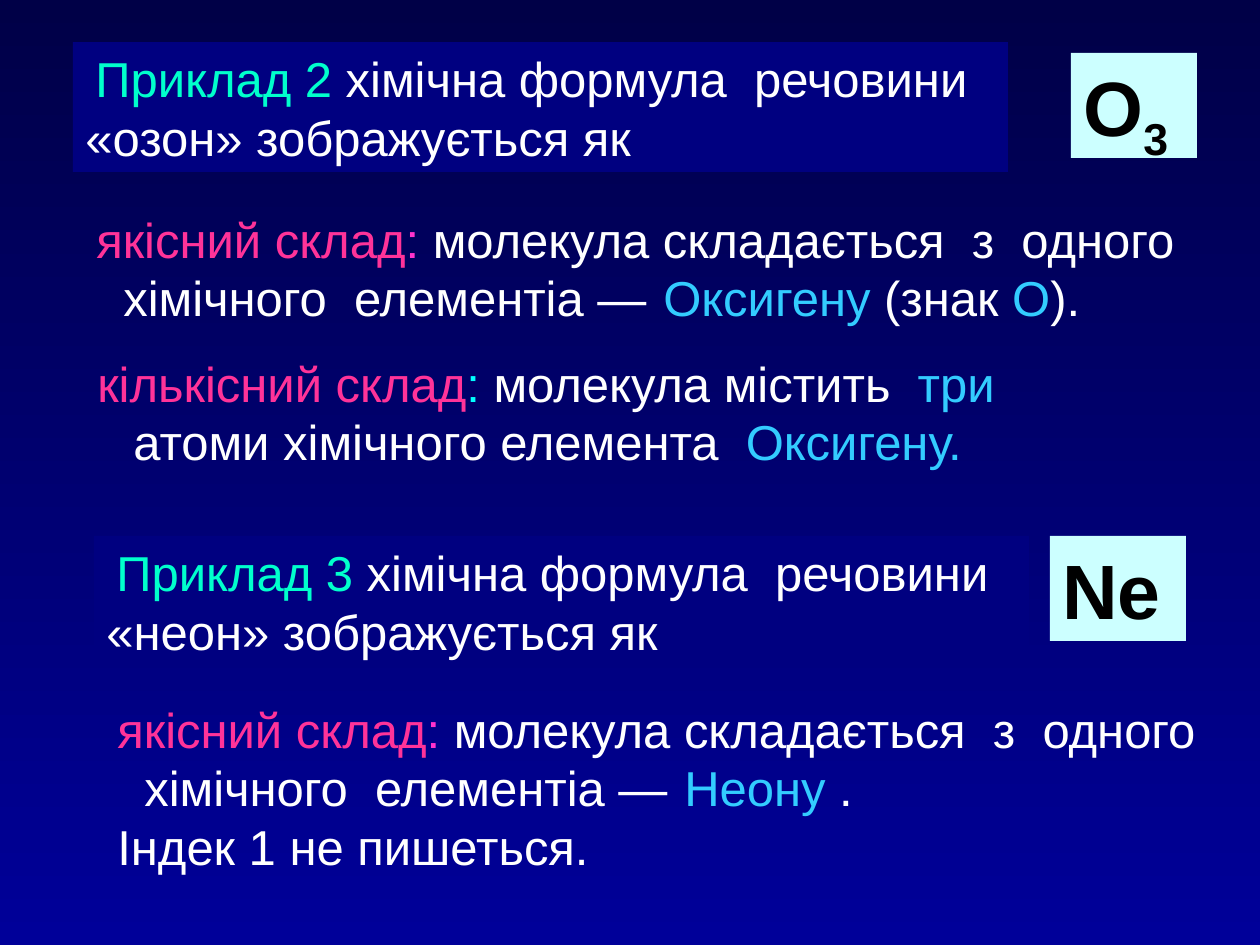
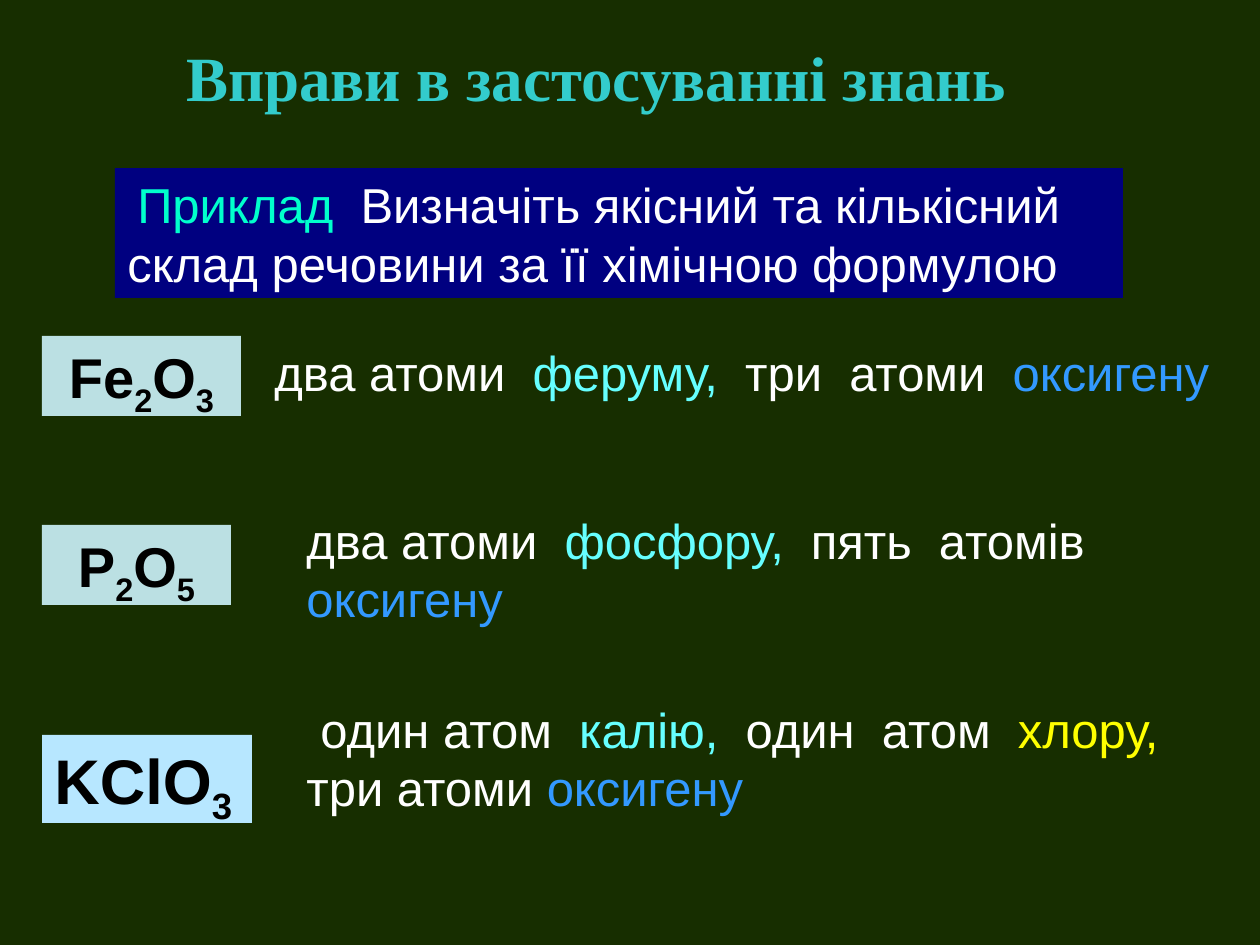
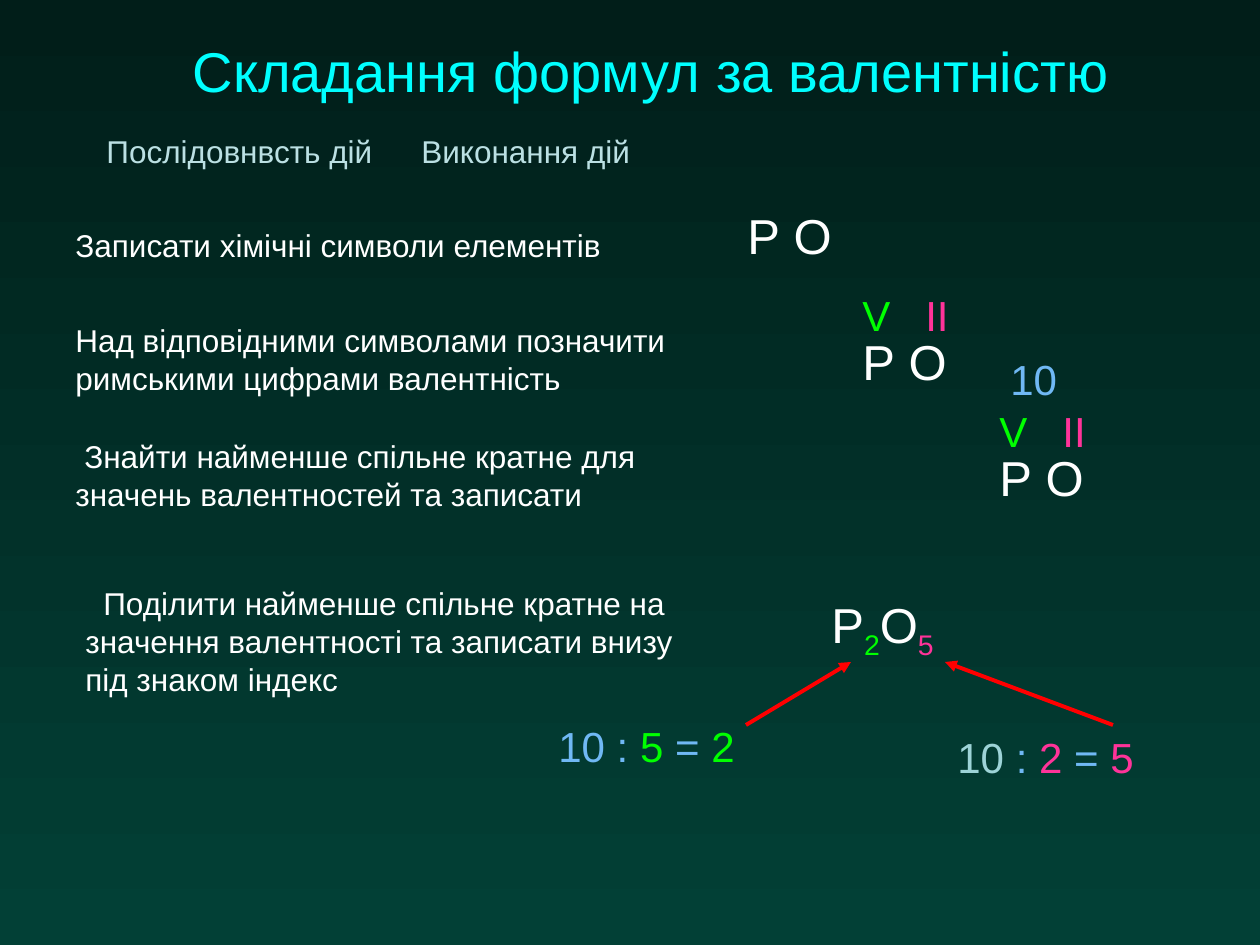
"""Build three chemistry slides on reading and composing formulas."""
import itertools

import pptx
import pptx.dml.color
import pptx.enum.shapes
import pptx.enum.text
import pptx.oxml.ns
import pptx.util
from lxml import etree

RGBColor = pptx.dml.color.RGBColor
ALIGN = pptx.enum.text.PP_ALIGN
ANCHOR = pptx.enum.text.MSO_ANCHOR

EMU_PER_PX = 914400 / 126
TITLE_ONLY, BLANK = 5, 6

WHITE = RGBColor(0xFF, 0xFF, 0xFF)
BLACK = RGBColor(0x00, 0x00, 0x00)
NAVY = RGBColor(0x00, 0x00, 0x80)
NIGHT_TOP, NIGHT_BOTTOM = RGBColor(0x00, 0x00, 0x47), RGBColor(0x00, 0x00, 0x99)
TEAL_TOP, TEAL_BOTTOM = RGBColor(0x01, 0x1E, 0x19), RGBColor(0x02, 0x40, 0x36)
FOREST = RGBColor(0x17, 0x2E, 0x00)
MINT = RGBColor(0x00, 0xFF, 0xCC)
PINK = RGBColor(0xFF, 0x33, 0x99)
MAGENTA = RGBColor(0xFF, 0x33, 0xCC)
CYAN = RGBColor(0x00, 0xFF, 0xFF)
TURQUOISE = RGBColor(0x33, 0xCC, 0xCC)
SKY = RGBColor(0x33, 0xCC, 0xFF)
AQUA = RGBColor(0x66, 0xFF, 0xFF)
BLUE = RGBColor(0x33, 0x99, 0xFF)
YELLOW = RGBColor(0xFF, 0xFF, 0x00)
GREEN = RGBColor(0x00, 0xFF, 0x00)
RED = RGBColor(0xFF, 0x00, 0x00)
SOFT_BLUE = RGBColor(0x70, 0xB8, 0xF4)
SOFT_TEAL = RGBColor(0x9D, 0xD3, 0xD7)
PALE_TEAL = RGBColor(0xBB, 0xE0, 0xE3)
PALE_CYAN = RGBColor(0xCC, 0xFF, 0xFF)
PALE_BLUE = RGBColor(0xB7, 0xE7, 0xFF)


def px(length):
    """Turn pixels into EMU."""
    return pptx.util.Emu(round(length * EMU_PER_PX))


def add_run(paragraph, text, color=WHITE, size=28, bold=False, font="Arial", subscript=False):
    """Append one formatted run to a paragraph."""
    run = paragraph.add_run()
    run.text = text
    run.font.name = font
    run.font.size = pptx.util.Pt(size)
    run.font.bold = bold
    run.font.color.rgb = color
    if subscript:
        run.font._element.set("baseline", "-25000")


def format_paragraph(paragraph, align=ALIGN.LEFT, first=0, margin=0, tab=None):
    """Set alignment, indents and an optional tab stop."""
    paragraph.alignment = align
    properties = paragraph._p.get_or_add_pPr()
    properties.set("marL", str(px(margin)))
    properties.set("indent", str(px(first - margin)))
    if tab:
        tabs = etree.SubElement(properties, pptx.oxml.ns.qn("a:tabLst"))
        etree.SubElement(tabs, pptx.oxml.ns.qn("a:tab"), pos=str(px(tab)), algn="l")


def add_box(slide, left, top, width, height, *lines, fill=None, subscript_digits=False,
            size=28, bold=False, **layout):
    """Add a text box, or a filled rectangle, with one paragraph per line of (text, color) runs."""
    place = [px(length) for length in (left, top, width, height)]
    if fill is None:
        shape = slide.shapes.add_textbox(*place)
    else:
        shape = slide.shapes.add_shape(pptx.enum.shapes.MSO_SHAPE.RECTANGLE, *place)
        shape.shadow.inherit = False
        shape.fill.solid()
        shape.fill.fore_color.rgb = fill
        shape.line.fill.background()
    frame = shape.text_frame
    frame.word_wrap = True
    frame.vertical_anchor = ANCHOR.TOP
    for index, runs in enumerate(lines):
        paragraph = frame.add_paragraph() if index else frame.paragraphs[0]
        format_paragraph(paragraph, **layout)
        for text, color in runs:
            add_run(paragraph, text, color, size, bold,
                    subscript=subscript_digits and text.isdigit())
    return shape


def add_formula(slide, left, top, width, height, formula, fill, size, align=ALIGN.LEFT):
    """Add a bold formula on a pale card, its digits lowered."""
    runs = [("".join(part), BLACK) for _, part in itertools.groupby(formula, str.isdigit)]
    add_box(slide, left, top, width, height, runs, fill=fill, size=size, bold=True,
            align=align, subscript_digits=True)


def add_task(slide, left, top, width, label, text):
    """Add a navy band with a labelled task."""
    add_box(slide, left, top, width, 130, [(label, MINT), (text, WHITE)], fill=NAVY, first=10)


def add_quality(slide, left, top, height, tab, element_runs, *notes):
    """Add the block on which element a molecule is made of."""
    lines = [[("якісний склад", PINK), (": ", MAGENTA),
              ("молекула складається  з  одного", WHITE)],
             [("хімічного  елементіа ―\t", WHITE), *element_runs], *notes]
    box = add_box(slide, left, top, 1120, height, *lines)
    format_paragraph(box.text_frame.paragraphs[1], first=27, tab=tab)


def add_valences(slide, left, top):
    """Add the symbols P and O with their valences above."""
    add_box(slide, left, top + 42, 116, 72, [("Р О", WHITE)])
    add_box(slide, left, top, 136, 63, [("V", GREEN), ("\tII", PINK)], size=24, tab=52)


def add_arrow(slide, *ends):
    """Add a red arrow from one point to another."""
    arrow = slide.shapes.add_connector(pptx.enum.shapes.MSO_CONNECTOR.STRAIGHT, *map(px, ends))
    arrow.line.color.rgb = RED
    arrow.line.width = pptx.util.Pt(2.25)
    etree.SubElement(arrow.line._get_or_add_ln(), pptx.oxml.ns.qn("a:tailEnd"), type="triangle")
    etree.SubElement(arrow._element.spPr, pptx.oxml.ns.qn("a:effectLst"))


def set_title(slide, left, top, width, height, text, anchor, **style):
    """Place and format the title placeholder."""
    title = slide.shapes.title
    title.left, title.top, title.width, title.height = map(px, (left, top, width, height))
    title.text_frame.word_wrap = True
    title.text_frame.vertical_anchor = anchor
    paragraph = title.text_frame.paragraphs[0]
    paragraph.alignment = ALIGN.CENTER
    add_run(paragraph, text, **style)


def add_slide(presentation, layout, *colors):
    """Add a slide with a solid or a top-to-bottom gradient background."""
    slide = presentation.slides.add_slide(presentation.slide_layouts[layout])
    fill = slide.background.fill
    if len(colors) == 1:
        fill.solid()
        fill.fore_color.rgb = colors[0]
    else:
        fill.gradient()
        fill.gradient_angle = 270
        for position, (stop, color) in enumerate(zip(fill.gradient_stops, colors)):
            stop.position = position
            stop.color.rgb = color
    return slide


def build_examples(presentation):
    """Build the slide on ozone and neon."""
    slide = add_slide(presentation, BLANK, NIGHT_TOP, NIGHT_BOTTOM)
    add_task(slide, 73, 42, 935, "Приклад 2", " хімічна формула  речовини «озон» зображується як")
    add_formula(slide, 1071, 53, 126, 105, "О3", PALE_CYAN, 44)
    add_quality(slide, 84, 203, 130, 591, [("Оксигену", SKY), (" (знак ", WHITE),
                                           ("О", SKY), (").", WHITE)])
    add_box(slide, 73, 347, 1008, 130,
            [("кількісний склад", PINK), (":", CYAN), (" молекула містить  ", WHITE),
             ("три ", SKY), ("атоми хімічного елемента  ", WHITE), ("Оксигену.", SKY)],
            first=12, margin=48)
    add_task(slide, 94, 536, 935, "Приклад 3", " хімічна формула  речовини «неон» зображується як")
    add_formula(slide, 1050, 536, 136, 105, "Ne", PALE_CYAN, 44)
    add_quality(slide, 105, 693, 189, 605, [("Неону", SKY), (" .", WHITE)],
                [("Індек 1 не пишеться.", WHITE)])


def build_exercises(presentation):
    """Build the slide of exercises on composition."""
    slide = add_slide(presentation, TITLE_ONLY, FOREST)
    set_title(slide, 94, 32, 1004, 107, "Вправи в застосуванні знань", ANCHOR.TOP,
              color=TURQUOISE, size=36, bold=True, font="Times New Roman")
    add_task(slide, 115, 168, 1008, "Приклад",
             "  Визначіть якісний та кількісний склад речовини за її хімічною формулою")
    add_formula(slide, 42, 336, 199, 80, "Fе2O3", PALE_TEAL, 32, ALIGN.CENTER)
    add_box(slide, 262, 336, 977, 72,
            [("два атоми  ", WHITE), ("феруму,", AQUA), ("  три  атоми  ", WHITE),
             ("оксигену", BLUE)])
    add_formula(slide, 42, 525, 189, 80, "P2O5", PALE_TEAL, 32, ALIGN.CENTER)
    add_box(slide, 294, 504, 840, 130,
            [("два атоми  ", WHITE), ("фосфору,", AQUA), ("  пять  атомів  ", WHITE),
             ("оксигену", BLUE)])
    add_formula(slide, 42, 735, 210, 88, "KClO3", PALE_BLUE, 36)
    add_box(slide, 294, 693, 924, 130,
            [("один атом  ", WHITE), ("калію,", AQUA), ("  один  атом  ", WHITE),
             ("хлору, ", YELLOW), ("три атоми ", WHITE), ("оксигену", BLUE)], first=14)


def build_valency(presentation):
    """Build the slide on composing a formula from valences."""
    slide = add_slide(presentation, TITLE_ONLY, TEAL_TOP, TEAL_BOTTOM)
    set_title(slide, 126, 21, 1050, 98, "Складання формул за валентністю", ANCHOR.MIDDLE,
              color=CYAN, size=32)
    add_box(slide, 94, 126, 1103, 50, [("Послідовнвсть дій\tВиконання дій", PALE_TEAL)],
            size=18, tab=765)
    steps = [
        (63, 220, 588, 50, 0, "Записати хімічні символи елементів"),
        (63, 315, 683, 88, 0,
         "Над відповідними символами позначити римськими цифрами валентність"),
        (63, 431, 683, 88, 9,
         "Знайти найменше спільне кратне для значень валентностей та записати"),
        (73, 578, 640, 126, 18,
         "Поділити найменше спільне кратне на значення валентності та записати внизу "
         "під знаком індекс"),
    ]
    for left, top, width, height, first, text in steps:
        add_box(slide, left, top, width, height, [(text, WHITE)], size=18, first=first)
    add_box(slide, 735, 199, 116, 72, [("Р О", WHITE)])
    add_valences(slide, 850, 283)
    add_valences(slide, 987, 399)
    add_box(slide, 998, 347, 84, 63, [("10", SOFT_BLUE)], size=24)
    add_box(slide, 819, 588, 147, 72,
            [("Р", WHITE), ("2", GREEN), ("О", WHITE), ("5", PINK)], subscript_digits=True)
    divisions = [(546, 714, SOFT_BLUE, GREEN, "5", "2"), (945, 725, SOFT_TEAL, PINK, "2", "5")]
    for left, top, multiple_color, color, divisor, index in divisions:
        add_box(slide, left, top, 221, 63,
                [("10 ", multiple_color), (": ", SOFT_BLUE), (divisor, color),
                 (" = ", SOFT_BLUE), (index, color)], size=24)
    add_arrow(slide, 746, 725, 851, 662)
    add_arrow(slide, 1113, 725, 945, 662)


def main():
    """Build and save the presentation."""
    presentation = pptx.Presentation()
    presentation.slide_width, presentation.slide_height = px(1260), px(945)
    build_examples(presentation)
    build_exercises(presentation)
    build_valency(presentation)
    presentation.save("out.pptx")


if __name__ == "__main__":
    main()
